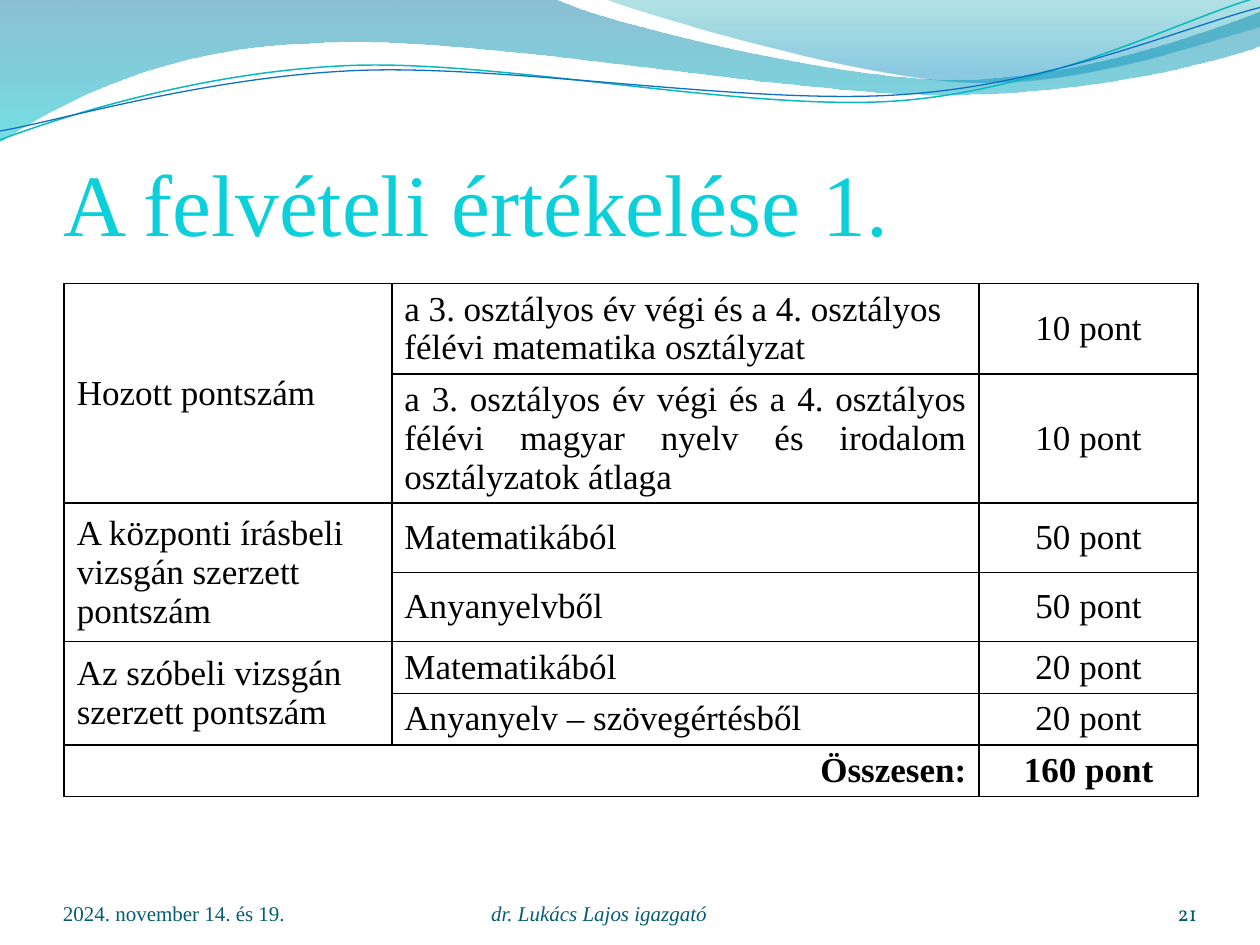
import math

from lxml import etree
from pptx import Presentation
from pptx import util as u
from pptx.dml.color import RGBColor
from pptx.enum import text
from pptx.oxml import ns

SERIF = "Times New Roman"
COLORS = {
    "title": "0BD0D9", "body": "000000", "footer": "045D75",
    "wave_top": "0074A1", "wave_bottom": "00C6CF",
    "crest_top": "00A1A9", "crest_bottom": "008BBF",
    "teal_line": "0AB8BF", "blue_line": "0F6FC6",
}
ALIGN = text.PP_ALIGN
ANCHOR = text.MSO_ANCHOR


def rgb(name):
    return RGBColor.from_string(COLORS[name])


def style(paragraph, size, color, align=ALIGN.LEFT, font=SERIF, bold=False, italic=False):
    paragraph.alignment = align
    paragraph.font.name = font
    paragraph.font.size = u.Pt(size)
    paragraph.font.color.rgb = rgb(color)
    paragraph.font.bold = bold
    paragraph.font.italic = italic


def set_insets(frame, top=0):
    frame.margin_left = frame.margin_right = frame.margin_bottom = 0
    frame.margin_top = u.Inches(top)


def turn(point, center, degrees):
    angle = math.radians(degrees)
    x, y = point[0] - center[0], point[1] - center[1]
    return (center[0] + x * math.cos(angle) - y * math.sin(angle),
            center[1] + x * math.sin(angle) + y * math.cos(angle))


def add_curve(slide, points, segments, close):
    corners = [(u.Inches(x), u.Inches(y)) for x, y in points]
    builder = slide.shapes.build_freeform(*corners[0])
    builder.add_line_segments(corners[1:], close=close)
    curve = builder.convert_to_shape()
    curve.shadow.inherit = False
    lines = iter(list(curve.element.spPr.iter(ns.qn("a:lnTo"))))
    for segment in segments:
        line = next(lines)
        if len(segment) == 3:
            line.tag = ns.qn("a:cubicBezTo")
            for _ in range(2):
                extra = next(lines)
                line.append(extra[0])
                extra.getparent().remove(extra)
    return curve


def flatten(start, segments):
    return [start] + [point for segment in segments for point in segment]


def add_wave(slide, start, segments, stops):
    wave = add_curve(slide, flatten(start, segments), segments, True)
    wave.line.fill.background()
    wave.fill.gradient()
    wave.fill.gradient_angle = 270
    for stop, (color, position, _) in zip(wave.fill.gradient_stops, stops):
        stop.color.rgb = rgb(color)
        stop.position = position
    tints = wave.element.spPr.iter(ns.qn("a:srgbClr"))
    for tint, (_, _, opacity) in zip(tints, stops):
        etree.SubElement(tint, ns.qn("a:alpha"), val=str(opacity * 1000))


def add_swoosh(slide, center, start, segments, color, width):
    tilt = 2.7
    points = [turn(point, center, tilt) for point in flatten(start, segments)]
    swoosh = add_curve(slide, points, segments, False)
    swoosh.rotation = 360 - tilt
    swoosh.fill.background()
    swoosh.line.color.rgb = rgb(color)
    swoosh.line.width = u.Pt(width)


def add_banner(slide):
    add_wave(slide, (0, 0), [
        [(4.4, -0.01)],
        [(4.76, 0.17), (6.64, 0.63), (7.58, 0.63)],
        [(8.53, 0.63), (9.58, 0.26), (10, 0.09)],
        [(10.01, 0.36)],
        [(9.83, 0.44), (8.7, 0.76), (7.46, 0.75)],
        [(6.22, 0.75), (3.82, 0.28), (2.57, 0.34)],
        [(1.29, 0.36), (0.46, 0.83), (-0.01, 1.13)],
    ], [("wave_top", 0, 45), ("wave_bottom", 1, 55)])
    add_wave(slide, (4.79, -0.01), [
        [(5.09, 0.11), (6.82, 0.62), (7.69, 0.65)],
        [(8.56, 0.69), (9.61, 0.32), (10, 0.21)],
        [(10, 0)],
    ], [("crest_top", 0, 30), ("crest_bottom", 0.8, 45)])
    add_swoosh(slide, (4.99, 0.575), (0, 1.11), [
        [(0.48, 0.93), (1.58, 0.57), (2.77, 0.52)],
        [(3.95, 0.47), (5.93, 0.89), (7.13, 0.8)],
        [(8.33, 0.71), (9.38, 0.15), (9.98, -0.02)],
    ], "teal_line", 0.85)
    add_swoosh(slide, (5, 0.59), (0, 1.04), [
        [(0.47, 0.96), (1.64, 0.61), (2.83, 0.56)],
        [(4.03, 0.51), (5.97, 0.84), (7.17, 0.75)],
        [(8.36, 0.67), (9.41, 0.21), (10, 0.06)],
    ], "blue_line", 0.75)


def add_title(slide, box):
    title = slide.shapes.title
    title.left, title.top, title.width, title.height = map(u.Inches, box)
    frame = title.text_frame
    frame.text = "A felvételi értékelése 1."
    frame.auto_size = text.MSO_AUTO_SIZE.NONE
    frame.vertical_anchor = ANCHOR.BOTTOM
    set_insets(frame, 0.05)
    style(frame.paragraphs[0], 50, "title")


def add_borders(cell):
    properties = cell._tc.get_or_add_tcPr()
    for side in ("a:lnL", "a:lnR", "a:lnT", "a:lnB"):
        border = etree.SubElement(properties, ns.qn(side), w=str(u.Pt(1)))
        fill = etree.SubElement(border, ns.qn("a:solidFill"))
        etree.SubElement(fill, ns.qn("a:srgbClr"), val=COLORS["body"])


def add_score_table(slide, box):
    scores = [
        ("Hozott pontszám",
         "a 3. osztályos év végi és a 4. osztályos \nfélévi matematika osztályzat", "10 pont"),
        ("", "a 3. osztályos év végi és a 4. osztályos félévi magyar nyelv "
             "és irodalom osztályzatok átlaga", "10 pont"),
        ("A központi írásbeli vizsgán szerzett pontszám", "Matematikából", "50 pont"),
        ("", "Anyanyelvből", "50 pont"),
        ("Az szóbeli vizsgán szerzett pontszám", "Matematikából", "20 pont"),
        ("", "Anyanyelv – szövegértésből", "20 pont"),
        ("Összesen:", "", "160 pont"),
    ]
    widths = [2.6, 4.66, 1.74]
    heights = [0.41, 0.41, 0.55, 0.55, 0.41, 0.41, 0.41]
    aligns = [ALIGN.LEFT, ALIGN.JUSTIFY, ALIGN.CENTER]
    total = len(scores) - 1

    holder = slide.shapes.add_table(len(scores), len(widths), *map(u.Inches, box))
    table = holder.table
    table.first_row = table.horz_banding = False
    for column, width in zip(table.columns, widths):
        column.width = u.Inches(width)
    for row, height in zip(table.rows, heights):
        row.height = u.Inches(height)
    holder.height = u.Inches(box[3])
    for r, row in enumerate(scores):
        for c, wording in enumerate(row):
            cell = table.cell(r, c)
            cell.text = wording
            cell.vertical_anchor = ANCHOR.MIDDLE
            add_borders(cell)
            cell.fill.background()
            align = ALIGN.RIGHT if r == total and c == 0 else aligns[c]
            for paragraph in cell.text_frame.paragraphs:
                style(paragraph, 20, "body", align, bold=r == total)
    for r in range(0, total, 2):
        table.cell(r, 0).merge(table.cell(r + 1, 0))
    table.cell(total, 0).merge(table.cell(total, 1))


def add_footer(slide, box):
    left, top, _, height = box
    parts = [
        ("2024. november 14. és 19.", 0, 2.33, ALIGN.LEFT, SERIF, False),
        ("dr. Lukács Lajos igazgató", 2.42, 3.67, ALIGN.CENTER, SERIF, True),
        ("21", 8.17, 0.83, ALIGN.RIGHT, "Vollkorn", False),
    ]
    for wording, offset, width, align, font, italic in parts:
        place = (left + offset, top, width, height)
        frame = slide.shapes.add_textbox(*map(u.Inches, place)).text_frame
        frame.word_wrap = True
        frame.vertical_anchor = ANCHOR.BOTTOM
        set_insets(frame)
        frame.text = wording
        style(frame.paragraphs[0], 12, "footer", align, font, italic=italic)


def main():
    deck = Presentation()
    deck.slide_width, deck.slide_height = u.Inches(10), u.Inches(7.5)
    slide = deck.slides.add_slide(deck.slide_layouts[5])
    add_banner(slide)
    add_title(slide, (0.5, 0.77, 9, 1.25))
    add_score_table(slide, (0.51, 2.25, 9, 4.27))
    add_footer(slide, (0.5, 6.95, 9, 0.4))
    deck.save("out.pptx")


if __name__ == "__main__":
    main()
